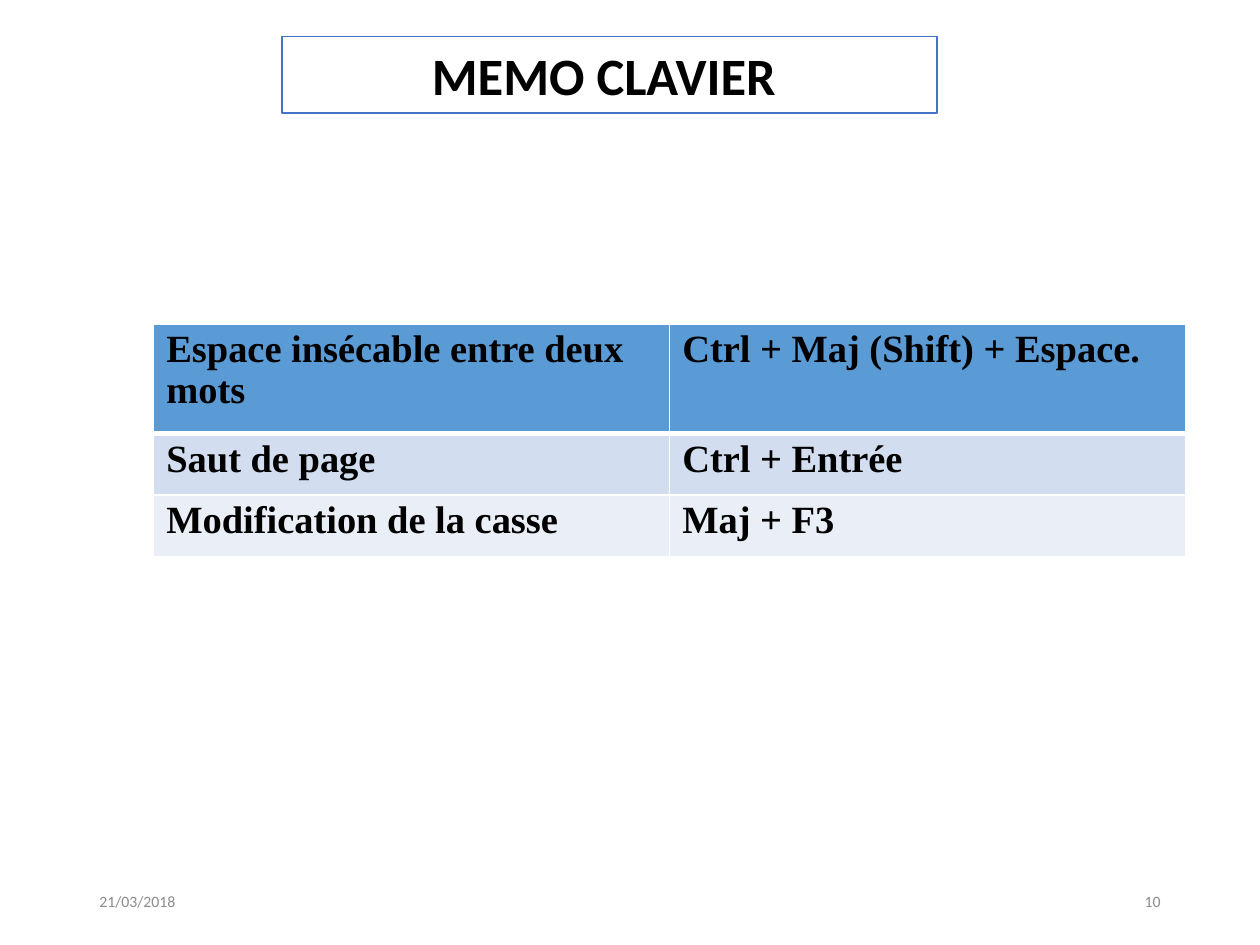
"""Builds the keyboard shortcut memo slide."""
import pptx
import pptx.dml.color
import pptx.enum.shapes
import pptx.enum.text
import pptx.oxml
import pptx.oxml.ns
import pptx.util
from pptx.util import Inches

ALIGN = pptx.enum.text.PP_ALIGN
ANCHOR = pptx.enum.text.MSO_ANCHOR


def color(value):
    return pptx.dml.color.RGBColor.from_string(value)


class MemoSlide:
    text_font = "Calibri"
    table_font = "Times New Roman"
    black = "000000"
    white = "FFFFFF"
    gray = "8C8C8C"
    blue = "4472C4"
    row_fills = ("5B9BD5", "D2DEEF", "EAEFF7")

    def __init__(self, presentation):
        self.slide = presentation.slides.add_slide(presentation.slide_layouts[6])

    def set_text(self, text_frame, text, font, size, text_color, bold=False, align=ALIGN.LEFT):
        text_frame.text = text
        text_frame.word_wrap = True
        paragraph = text_frame.paragraphs[0]
        paragraph.alignment = align
        run_font = paragraph.runs[0].font
        run_font.name = font
        run_font.size = pptx.util.Pt(size)
        run_font.bold = bold
        run_font.color.rgb = color(text_color)

    def title(self, text, left, top, width, height):
        shape = self.slide.shapes.add_shape(
            pptx.enum.shapes.MSO_SHAPE.RECTANGLE, left, top, width, height)
        shape.shadow.inherit = False
        shape.fill.solid()
        shape.fill.fore_color.rgb = color(self.white)
        shape.line.color.rgb = color(self.blue)
        shape.line.width = pptx.util.Pt(1)
        shape.text_frame.vertical_anchor = ANCHOR.TOP
        self.set_text(shape.text_frame, text, self.text_font, 30, self.black, True, ALIGN.CENTER)

    def footer(self, text, left, align):
        shape = self.slide.shapes.add_textbox(left, Inches(6.95), Inches(2.25), Inches(0.4))
        shape.text_frame.vertical_anchor = ANCHOR.MIDDLE
        self.set_text(shape.text_frame, text, self.text_font, 9, self.gray, align=align)

    def border(self, cell, top_width, bottom_width):
        properties = cell._tc.get_or_add_tcPr()
        widths = {"lnL": 1, "lnR": 1, "lnT": top_width, "lnB": bottom_width}
        for index, (side, width) in enumerate(widths.items()):
            properties.insert(index, pptx.oxml.parse_xml(
                f'<a:{side} {pptx.oxml.ns.nsdecls("a")} w="{pptx.util.Pt(width)}">'
                f'<a:solidFill><a:srgbClr val="{self.white}"/></a:solidFill></a:{side}>'))

    def table(self, rows, left, top, width, heights):
        table = self.slide.shapes.add_table(
            len(rows), len(rows[0]), left, top, width, sum(heights)).table
        for row_index, (texts, height, fill) in enumerate(zip(rows, heights, self.row_fills)):
            table.rows[row_index].height = height
            for column_index, text in enumerate(texts):
                cell = table.cell(row_index, column_index)
                cell.fill.solid()
                cell.fill.fore_color.rgb = color(fill)
                self.border(cell, 3 if row_index == 1 else 1, 3 if row_index == 0 else 1)
                self.set_text(cell.text_frame, text, self.table_font, 22, self.black, True)
                cell.text_frame.paragraphs[0].line_spacing = 0.95


def main():
    presentation = pptx.Presentation()
    presentation.slide_width = Inches(10)
    presentation.slide_height = Inches(7.5)
    memo = MemoSlide(presentation)
    memo.footer("21/03/2018", Inches(0.69), ALIGN.LEFT)
    memo.footer("10", Inches(7.06), ALIGN.RIGHT)
    shortcuts = [
        ("Espace insécable entre deux mots", "Ctrl + Maj (Shift) + Espace."),
        ("Saut de page", "Ctrl + Entrée"),
        ("Modification de la casse", "Maj + F3"),
    ]
    memo.table(shortcuts, Inches(1.22), Inches(2.57), Inches(8.19),
               [Inches(0.87), Inches(0.49), Inches(0.49)])
    memo.title("MEMO CLAVIER ", Inches(2.24), Inches(0.29), Inches(5.2), Inches(0.61))
    presentation.save("out.pptx")


if __name__ == "__main__":
    main()
